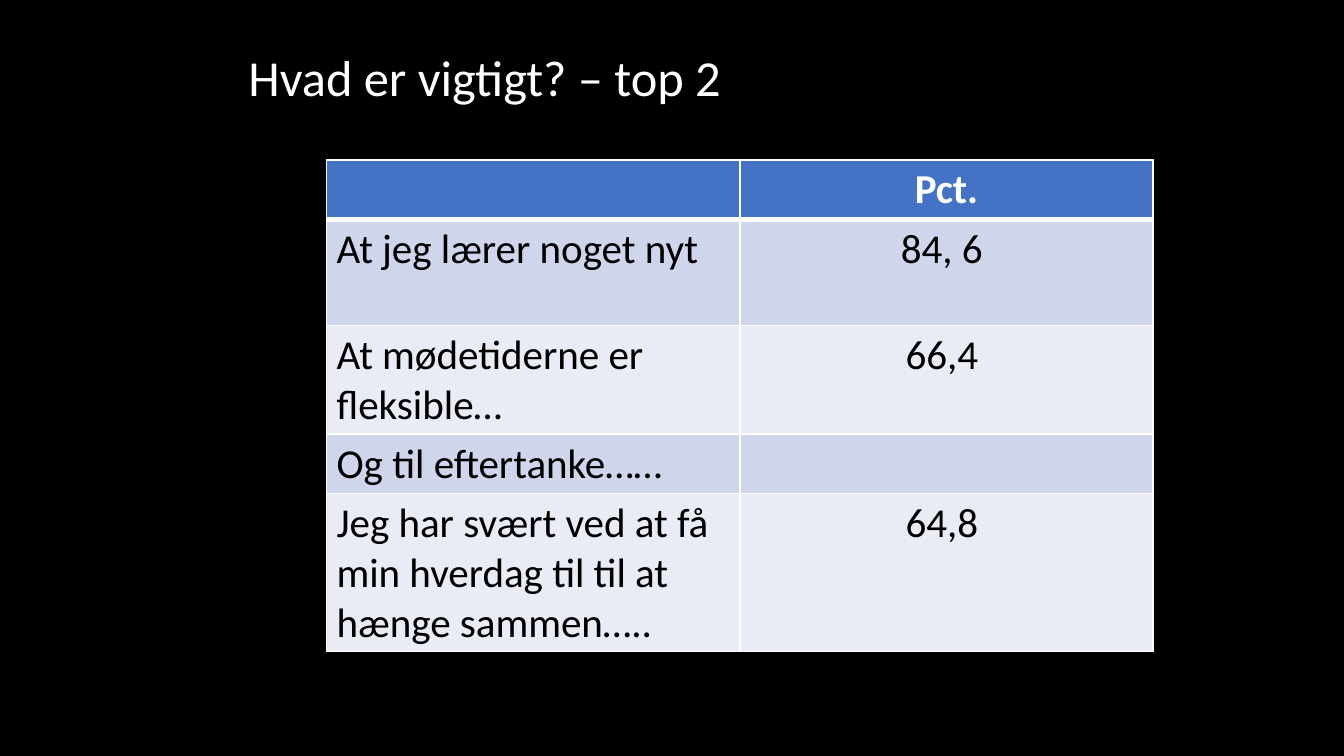
from dataclasses import dataclass

from lxml import etree
from pptx import Presentation
from pptx.dml.color import RGBColor
from pptx.enum.text import MSO_ANCHOR, PP_ALIGN
from pptx.oxml.ns import qn
from pptx.util import Inches, Pt

LEFT, CENTER = PP_ALIGN.LEFT, PP_ALIGN.CENTER
MIDDLE = MSO_ANCHOR.MIDDLE

WIDE = 10
HIGH = WIDE * 9 / 16
TALL = (0.43, 0.79, 0.8, 0.43, 1.17)
ROWS = (
    ("", "Pct."),
    ("At jeg lærer noget nyt", "84, 6 "),
    ("At mødetiderne er fleksible…", "66,4 "),
    ("Og til eftertanke……", ""),
    ("Jeg har svært ved at få min hverdag til til at hænge sammen…..", "64,8 "),
)


@dataclass(frozen=True)
class Theme:
    font: str = "Calibri"
    back: str = "000000"
    light: str = "FFFFFF"
    dark: str = "000000"
    head: str = "4472C4"
    bands: tuple = ("E9EBF5", "CFD5EA")
    title: int = 27
    body: int = 22
    thin: int = 1
    thick: int = 3


THEME = Theme()


def paint(fill, color):
    fill.solid()
    fill.fore_color.rgb = RGBColor.from_string(color)


def add_run(para, text, size, color, bold=False):
    run = para.add_run()
    run.text = text
    font = run.font
    font.name, font.size, font.bold = THEME.font, Pt(size), bold
    font.color.rgb = RGBColor.from_string(color)


def add_title(slide, text):
    box = slide.shapes.add_textbox(
        Inches(0.175 * WIDE), Inches(0.19), Inches(0.669 * WIDE), Inches(0.81))
    frame = box.text_frame
    frame.word_wrap = True
    frame.vertical_anchor = MIDDLE
    para = frame.paragraphs[0]
    para.line_spacing = 0.9
    add_run(para, text, THEME.title, THEME.light)


def add_edges(cell):
    """Draw a head cell's borders; must come before its fill."""
    props = cell._tc.get_or_add_tcPr()
    for side in "LRTB":
        width = THEME.thick if side == "B" else THEME.thin
        line = etree.SubElement(props, qn(f"a:ln{side}"), w=str(Pt(width)))
        solid = etree.SubElement(line, qn("a:solidFill"))
        etree.SubElement(solid, qn("a:srgbClr"), val=THEME.light)


def fill_cell(cell, text, row, col):
    head = row == 0
    if head:
        add_edges(cell)
    paint(cell.fill, THEME.head if head else THEME.bands[row % 2])
    cell.margin_left = cell.margin_right = Pt(5.4)
    cell.margin_top = cell.margin_bottom = Pt(2.7)
    para = cell.text_frame.paragraphs[0]
    para.alignment = CENTER if col else LEFT
    if text:
        add_run(para, text, THEME.body, THEME.light if head else THEME.dark, head)


def add_grid(slide):
    frame = slide.shapes.add_table(
        len(ROWS), len(ROWS[0]), Inches(0.243 * WIDE), Inches(1.19),
        Inches(0.615 * WIDE), Inches(sum(TALL)))
    table = frame.table
    for row, (high, texts) in enumerate(zip(TALL, ROWS)):
        table.rows[row].height = Inches(high)
        for col, text in enumerate(texts):
            fill_cell(table.cell(row, col), text, row, col)


def main():
    deck = Presentation()
    deck.slide_width, deck.slide_height = Inches(WIDE), Inches(HIGH)
    slide = deck.slides.add_slide(deck.slide_layouts[6])
    paint(slide.background.fill, THEME.back)
    add_title(slide, "Hvad er vigtigt? – top 2")
    add_grid(slide)
    deck.save("out.pptx")


if __name__ == "__main__":
    main()
